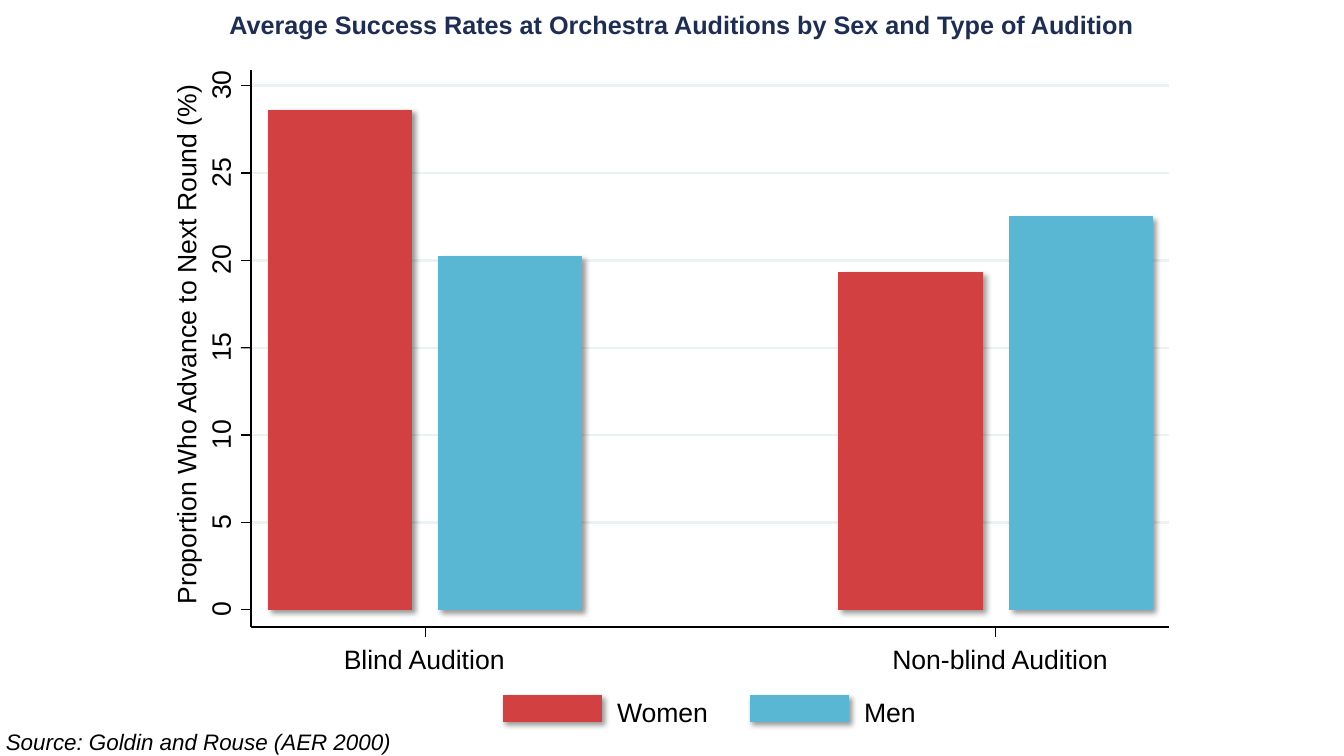
"""Build a slide with a drawn bar chart of orchestra audition success rates."""
import dataclasses

import pptx
import pptx.dml.color
import pptx.enum.shapes
import pptx.enum.text
import pptx.oxml
import pptx.oxml.ns
import pptx.util

Inches = pptx.util.Inches
RGBColor = pptx.dml.color.RGBColor

WHITE = RGBColor(0xFF, 0xFF, 0xFF)
BLACK = RGBColor(0x00, 0x00, 0x00)
NAVY = RGBColor(0x1E, 0x2D, 0x53)
GRID = RGBColor(0xEA, 0xF2, 0xF3)
RED = RGBColor(0xD3, 0x40, 0x41)
BLUE = RGBColor(0x5A, 0xB7, 0xD4)

LEFT, RIGHT, TOP, FLOOR = 2.49, 11.59, 0.69, 6.22
ZERO, UNIT = 6.05, 5.2 / 30
TICK = 0.1
THIN = 0.88
MIDDLE = 15
STEP = 5.66

SHADOW = (
    f'<a:effectLst {pptx.oxml.ns.nsdecls("a")}>'
    '<a:outerShdw blurRad="50800" dist="38100" dir="2700000" algn="tl" rotWithShape="0">'
    '<a:srgbClr val="000000"><a:alpha val="40000"/></a:srgbClr>'
    '</a:outerShdw></a:effectLst>'
)


@dataclasses.dataclass(frozen=True)
class Box:
    left: float
    top: float
    width: float
    height: float


@dataclasses.dataclass(frozen=True)
class Label:
    text: str
    box: Box
    size: int = 19
    color: RGBColor = BLACK
    bold: bool = False
    italic: bool = False
    center: bool = False
    turn: int = 0
    inset: tuple[float, float] = (0, 0)


@dataclasses.dataclass(frozen=True)
class Series:
    color: RGBColor
    left: float
    rates: tuple[float, float]
    key: float


SERIES = (
    Series(RED, 2.66, (28.6, 19.3), 4.99),
    Series(BLUE, 4.35, (20.2, 22.5), 7.44),
)

LABELS = (
    Label("Proportion Who Advance to Next Round (%)", Box(-0.77, 3.22, 5.23, 0.32), turn=270),
    Label("Blind Audition", Box(3.41, 6.38, 1.73, 0.35)),
    Label("Non-blind Audition", Box(8.85, 6.38, 2.17, 0.32)),
    Label("Women", Box(6.12, 6.9, 1.04, 0.35)),
    Label("Men", Box(8.57, 6.9, 0.62, 0.35)),
    Label("Average Success Rates at Orchestra Auditions by Sex and Type of Audition",
          Box(2.23, 0.09, 9.06, 0.3), size=18, color=NAVY, bold=True, center=True),
    Label("Source: Goldin and Rouse (AER 2000)", Box(-0.04, 7.17, 4.07, 0.37),
          size=16, italic=True, inset=(0.1, 0.05)),
)


def draw_box(shapes, box: Box, color: RGBColor, width: float = THIN, shade: bool = False):
    shape = shapes.add_shape(
        pptx.enum.shapes.MSO_SHAPE.RECTANGLE,
        Inches(box.left), Inches(box.top), Inches(box.width), Inches(box.height))
    shape.fill.solid()
    shape.fill.fore_color.rgb = color
    shape.line.color.rgb = color
    shape.line.width = pptx.util.Pt(width)
    if shade:
        shape._element.spPr.append(pptx.oxml.parse_xml(SHADOW))
    else:
        shape.shadow.inherit = False
    return shape


def draw_line(shapes, start: tuple[float, float], end: tuple[float, float],
              color: RGBColor = BLACK, width: float = THIN):
    line = shapes.add_connector(
        pptx.enum.shapes.MSO_CONNECTOR.STRAIGHT,
        Inches(start[0]), Inches(start[1]), Inches(end[0]), Inches(end[1]))
    line.line.color.rgb = color
    line.line.width = pptx.util.Pt(width)
    line._element.spPr.append(
        pptx.oxml.parse_xml(f'<a:effectLst {pptx.oxml.ns.nsdecls("a")}/>'))
    return line


def draw_text(shapes, label: Label) -> None:
    box = label.box
    area = shapes.add_textbox(
        Inches(box.left), Inches(box.top), Inches(box.width), Inches(box.height))
    area.rotation = label.turn
    frame = area.text_frame
    frame.word_wrap = False
    frame.auto_size = pptx.enum.text.MSO_AUTO_SIZE.SHAPE_TO_FIT_TEXT
    frame.margin_left = frame.margin_right = Inches(label.inset[0])
    frame.margin_top = frame.margin_bottom = Inches(label.inset[1])
    line = frame.paragraphs[0]
    if label.center:
        line.alignment = pptx.enum.text.PP_ALIGN.CENTER
    run = line.add_run()
    run.text = label.text
    run.font.name = "Arial"
    run.font.size = pptx.util.Pt(label.size)
    run.font.color.rgb = label.color
    run.font.bold = label.bold
    run.font.italic = label.italic


def level(value: float) -> float:
    return ZERO - value * UNIT


def draw_grid(shapes, plot) -> None:
    for value in range(5, 31, 5):
        y = level(value)
        line = draw_line(shapes, (LEFT, y), (RIGHT, y), GRID, 1.75)
        if value == MIDDLE:
            line.begin_connect(plot, 1)
            line.end_connect(plot, 3)


def draw_bars(shapes) -> None:
    for item in SERIES:
        for group, rate in enumerate(item.rates):
            bar = Box(item.left + group * STEP, level(rate), 1.42, rate * UNIT)
            draw_box(shapes, bar, item.color, 0, shade=True)


def draw_axes(shapes, plot) -> None:
    draw_line(shapes, (LEFT, FLOOR), (LEFT, TOP))
    for value in range(0, 31, 5):
        y = level(value)
        tick = draw_line(shapes, (LEFT, y), (LEFT - TICK, y))
        if value == MIDDLE:
            tick.begin_connect(plot, 1)
        wide = 0.26 if value < 10 else 0.41
        draw_text(shapes, Label(str(value), Box(2.2 - wide / 2, y - 0.24, wide, 0.35), turn=270))
    draw_line(shapes, (LEFT, FLOOR), (RIGHT, FLOOR))
    for x in (4.22, 9.87):
        draw_line(shapes, (x, FLOOR), (x, FLOOR + TICK))


def draw_key(shapes) -> None:
    draw_box(shapes, Box(4.97, 6.88, 4.14, 0.31), WHITE)
    for item in SERIES:
        draw_box(shapes, Box(item.key, 6.9, 0.98, 0.26), item.color, 0, shade=True)


def main() -> None:
    deck = pptx.Presentation()
    deck.slide_width = Inches(13.33)
    deck.slide_height = Inches(7.5)
    shapes = deck.slides.add_slide(deck.slide_layouts[6]).shapes
    draw_box(shapes, Box(1.51, 0.01, 10.31, 7.49), WHITE)
    plot = draw_box(shapes, Box(LEFT, TOP, RIGHT - LEFT, 2 * (level(MIDDLE) - TOP)), WHITE)
    draw_grid(shapes, plot)
    draw_bars(shapes)
    draw_axes(shapes, plot)
    draw_key(shapes)
    for label in LABELS:
        draw_text(shapes, label)
    deck.save("out.pptx")


if __name__ == "__main__":
    main()
